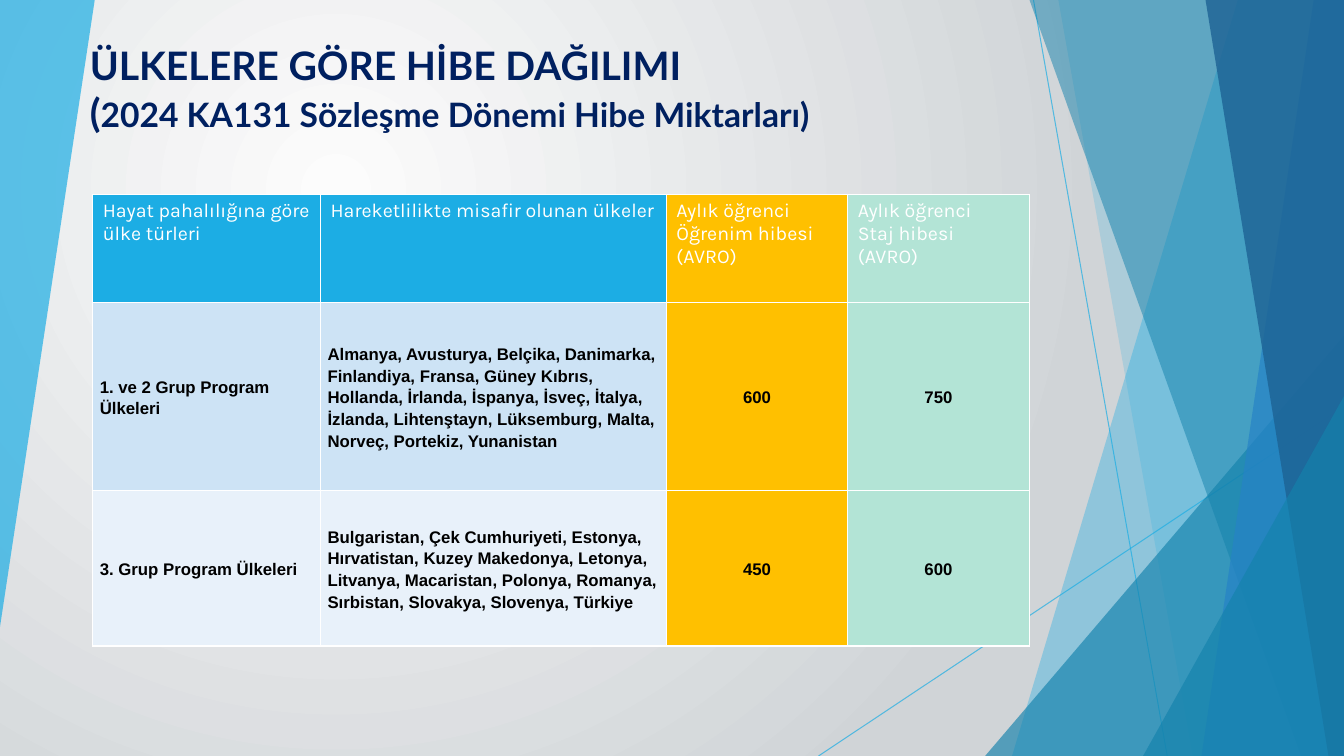
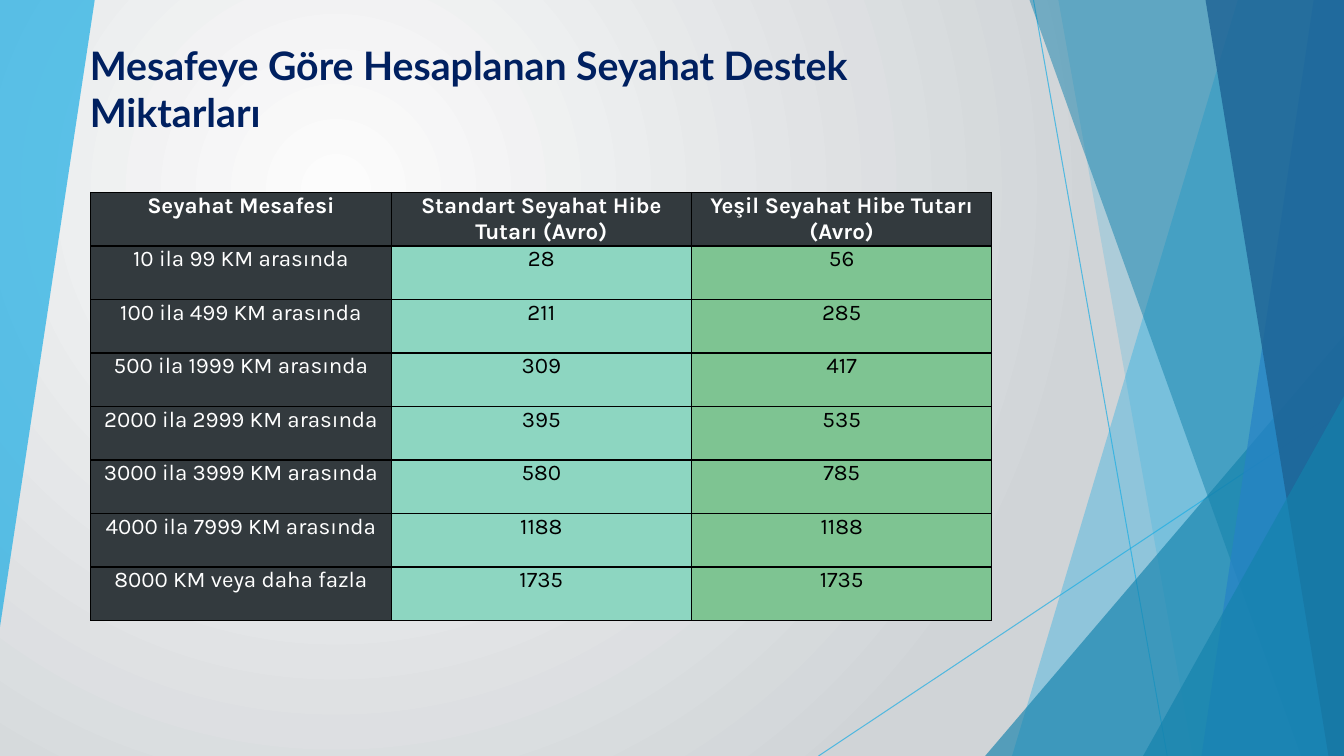
from dataclasses import dataclass, replace

from lxml.etree import SubElement
from pptx import Presentation
from pptx.dml.color import RGBColor as RGB
from pptx.enum.shapes import MSO_CONNECTOR as CONNECTOR, MSO_SHAPE as SHAPE
from pptx.enum.text import MSO_ANCHOR as ANCHOR, MSO_AUTO_SIZE as AUTO, PP_ALIGN as ALIGN
from pptx.oxml import parse_xml
from pptx.oxml.ns import nsdecls, qn
from pptx.util import Inches, Pt


@dataclass(frozen=True)
class Theme:
    """Colours, fonts and type sizes."""
    white: str = "FFFFFF"
    black: str = "000000"
    navy: str = "002060"
    sky: str = "1CADE4"
    teal: str = "1482AC"
    blue: str = "2683C6"
    deep: str = "1D6294"
    glow: str = "FCFCFC"
    mist: str = "D0D4D7"
    amber: str = "FFC000"
    mint: str = "B3E4D6"
    ice: str = "CDE3F5"
    frost: str = "E8F1FA"
    slate: str = "333A3E"
    aqua: str = "8DD6C1"
    green: str = "7EC492"
    title_font: str = "Lato"
    table_font: str = "Karla"
    body_font: str = "Arial"
    title: int = 28
    subtitle: int = 24
    distance: int = 16
    header: int = 14
    body: int = 12


T = Theme()


@dataclass(frozen=True)
class Style:
    """Look of one table cell; margins are in inches."""
    fill: str
    size: int
    font: str = T.table_font
    color: str = T.white
    bold: bool = False
    align: ALIGN = ALIGN.LEFT
    anchor: ANCHOR = ANCHOR.TOP
    side: float = 0.1
    edge: float = 0.05
    spacing: float = 1.0


class Deck:
    """Holds the style and the current slide; lengths are percents of the slide."""

    def __init__(self):
        self.prs = Presentation()
        self.prs.slide_width, self.prs.slide_height = Inches(13.333), Inches(7.5)
        self.layout = self.prs.slide_layouts[5]
        self.s = None

    def x(self, share):
        return round(self.prs.slide_width * share / 100)

    def y(self, share):
        return round(self.prs.slide_height * share / 100)

    def slide(self):
        self.s = self.prs.slides.add_slide(self.layout)

    # Shared background and facets, kept on the layout
    def backdrop(self):
        fill = self.layout.background.fill
        fill.gradient()
        for stop, color in zip(fill.gradient_stops, (T.glow, T.mist)):
            stop.color.rgb = RGB.from_string(color)
        grad = self.layout.element.find(".//" + qn("a:gradFill"))
        grad.replace(grad.find(qn("a:lin")), parse_xml(
            f'<a:path {nsdecls("a")} path="circle"><a:fillToRect l="50000" '
            't="50000" r="100000" b="100000"/></a:path>'))

        facets = [
            self.polygon([(0, 0), (7.05, 0), (0, 82.95)], T.sky, 70),
            self.line((76.9, 0), (86.85, 100), T.sky, 70),
            self.line((100, 53.75), (60.9, 100), T.sky, 70),
            self.band(92.1, 75.3, T.sky, 36),
            self.band(78.75, 88.75, T.sky, 20),
            self.triangle(73.3, 44.4, T.teal, 66),
            self.band(76.6, 96.8, T.teal, 50),
            self.band(97.75, 89.4, T.blue, 70),
            self.band(89.7, 98.85, T.deep, 80),
            self.triangle(85.05, 52.4, T.teal, 66),
        ]
        first = self.layout.placeholders[0].element
        for number, sp in enumerate(facets, 100):
            sp.element.find(".//" + qn("p:cNvPr")).set("id", str(number))
            first.addprevious(sp.element)

    def fade(self, sp, opacity):
        color = sp.element.spPr.find(".//" + qn("a:srgbClr"))
        SubElement(color, qn("a:alpha"), val=str(opacity * 1000))

    def paint(self, sp, color, opacity):
        sp.shadow.inherit = False
        sp.fill.solid()
        sp.fill.fore_color.rgb = RGB.from_string(color)
        sp.line.fill.background()
        self.fade(sp, opacity)
        return sp

    def polygon(self, points, color, opacity):
        start, *rest = [(self.x(px), self.y(py)) for px, py in points]
        builder = self.s.shapes.build_freeform(*start)
        builder.add_line_segments(rest, close=True)
        return self.paint(builder.convert_to_shape(), color, opacity)

    def band(self, top, bottom, color, opacity):
        """Full-height facet from a slanted left side to the right edge."""
        return self.polygon([(top, 0), (100, 0), (100, 100), (bottom, 100)], color, opacity)

    def triangle(self, left, top, color, opacity):
        """Right triangle that fills the bottom right corner."""
        sp = self.s.shapes.add_shape(SHAPE.ISOSCELES_TRIANGLE, self.x(left), self.y(top),
                                     self.x(100 - left), self.y(100 - top))
        sp.adjustments[0] = 1
        return self.paint(sp, color, opacity)

    def line(self, start, end, color, opacity):
        sp = self.s.shapes.add_connector(CONNECTOR.STRAIGHT, self.x(start[0]), self.y(start[1]),
                                         self.x(end[0]), self.y(end[1]))
        sp.line.width = Pt(0.75)
        sp.line.color.rgb = RGB.from_string(color)
        self.fade(sp, opacity)
        SubElement(sp.element.spPr, qn("a:effectLst"))
        return sp

    # Text
    def format(self, p, size, font, color, bold):
        for r in p.runs:
            r.font.size, r.font.name, r.font.bold = Pt(size), font, bold
            r.font.color.rgb = RGB.from_string(color)
        for br in p._p.findall(qn("a:br")):
            SubElement(br, qn("a:rPr"), sz=str(size * 100))

    def title(self, text, smaller=""):
        sp = self.s.shapes.title
        sp.left, sp.top = self.x(5.93), self.y(8.4)
        sp.width, sp.height = self.x(70.75), self.y(10.13)
        tf = sp.text_frame
        tf.text = text
        tf.word_wrap, tf.auto_size = True, AUTO.NONE
        tf.vertical_anchor = ANCHOR.BOTTOM
        p = tf.paragraphs[0]
        p.alignment = ALIGN.LEFT
        if smaller:
            p.add_run().text = smaller
        self.format(p, T.title, T.title_font, T.navy, True)
        if smaller:
            p.runs[-1].font.size = Pt(T.subtitle)

    # Tables
    def table(self, left, top, cols, rows, data, style_of, border):
        frame = self.s.shapes.add_table(len(rows), len(cols), self.x(left), self.y(top),
                                        self.x(sum(cols)), self.y(sum(rows)))
        table = frame.table
        table.first_row = table.horz_banding = False
        for col, width in zip(table.columns, cols):
            col.width = self.x(width)
        for row, height in zip(table.rows, rows):
            row.height = self.y(height)
        for i, texts in enumerate(data):
            for j, text in enumerate(texts):
                self.cell(table.cell(i, j), text, style_of(i, j), border)

    def cell(self, cell, text, style, border):
        cell.text_frame.text = text
        cell.vertical_anchor = style.anchor
        cell.margin_left = cell.margin_right = Inches(style.side)
        cell.margin_top = cell.margin_bottom = Inches(style.edge)
        cell.fill.solid()
        cell.fill.fore_color.rgb = RGB.from_string(style.fill)
        p = cell.text_frame.paragraphs[0]
        p.alignment, p.line_spacing = style.align, style.spacing
        self.format(p, style.size, style.font, style.color, style.bold)
        tc_pr = cell._tc.get_or_add_tcPr()
        for n, side in enumerate("LRTB"):
            tc_pr.insert(n, parse_xml(
                f'<a:ln{side} {nsdecls("a")} w="12700"><a:solidFill>'
                f'<a:srgbClr val="{border}"/></a:solidFill></a:ln{side}>'))


# Grants by country group
GRANTS = [
    ("Hayat pahalılığına göre ülke türleri", "Hareketlilikte misafir olunan ülkeler",
     "Aylık öğrenci Öğrenim hibesi (AVRO)", "Aylık öğrenci \vStaj hibesi (AVRO)"),
    ("1. ve 2 Grup Program Ülkeleri",
     "Almanya, Avusturya, Belçika, Danimarka, Finlandiya, Fransa, Güney Kıbrıs, "
     "Hollanda, İrlanda, İspanya, İsveç, İtalya, İzlanda, Lihtenştayn, Lüksemburg, "
     "Malta, Norveç, Portekiz, Yunanistan", "600", "750"),
    ("3. Grup Program Ülkeleri",
     "Bulgaristan, Çek Cumhuriyeti, Estonya, Hırvatistan, Kuzey Makedonya, Letonya, "
     "Litvanya, Macaristan, Polonya, Romanya, Sırbistan, Slovakya, Slovenya, Türkiye",
     "450", "600"),
]

# Travel support by distance
TRAVEL = [
    ("Seyahat Mesafesi", "Standart Seyahat Hibe Tutarı (Avro)", "Yeşil Seyahat Hibe Tutarı (Avro)"),
    ("10 ila 99 KM arasında", "28", "56"),
    ("100 ila 499 KM arasında", "211", "285"),
    ("500 ila 1999 KM arasında", "309", "417"),
    ("2000 ila 2999 KM arasında", "395", "535"),
    ("3000 ila 3999 KM arasında", "580", "785"),
    ("4000 ila 7999 KM arasında", "1188", "1188"),
    ("8000 KM veya daha fazla", "1735", "1735"),
]


def grant_style(row, col):
    fill = (T.sky, T.ice, T.frost)[row] if col < 2 else (T.amber, T.mint)[col - 2]
    if row == 0:
        return Style(fill, T.header)
    return Style(fill, T.body, T.body_font, T.black, True,
                 ALIGN.LEFT if col < 2 else ALIGN.CENTER, ANCHOR.MIDDLE, 0.07, 0, 1.15)


def travel_style(row, col):
    label = Style(T.slate, T.distance, bold=row == 0, align=ALIGN.CENTER, side=0, edge=0)
    if row == 0 or col == 0:
        return label
    return replace(label, fill=(T.aqua, T.green)[col - 1], color=T.black)


def main():
    deck = Deck()

    deck.slide()
    deck.backdrop()
    deck.title("ÜLKELERE GÖRE HİBE DAĞILIMI \v(", "2024 KA131 Sözleşme Dönemi Hibe Miktarları)")
    deck.table(6.9, 25.73, [16.95, 25.73, 13.5, 13.5], [14.27, 24.93, 20.53],
               GRANTS, grant_style, T.white)

    deck.slide()
    deck.title("Mesafeye Göre Hesaplanan Seyahat Destek Miktarları")
    deck.table(6.75, 25.47, [22.35] * 3, [7.08] * len(TRAVEL),
               TRAVEL, travel_style, T.black)

    deck.prs.save("out.pptx")


if __name__ == "__main__":
    main()
